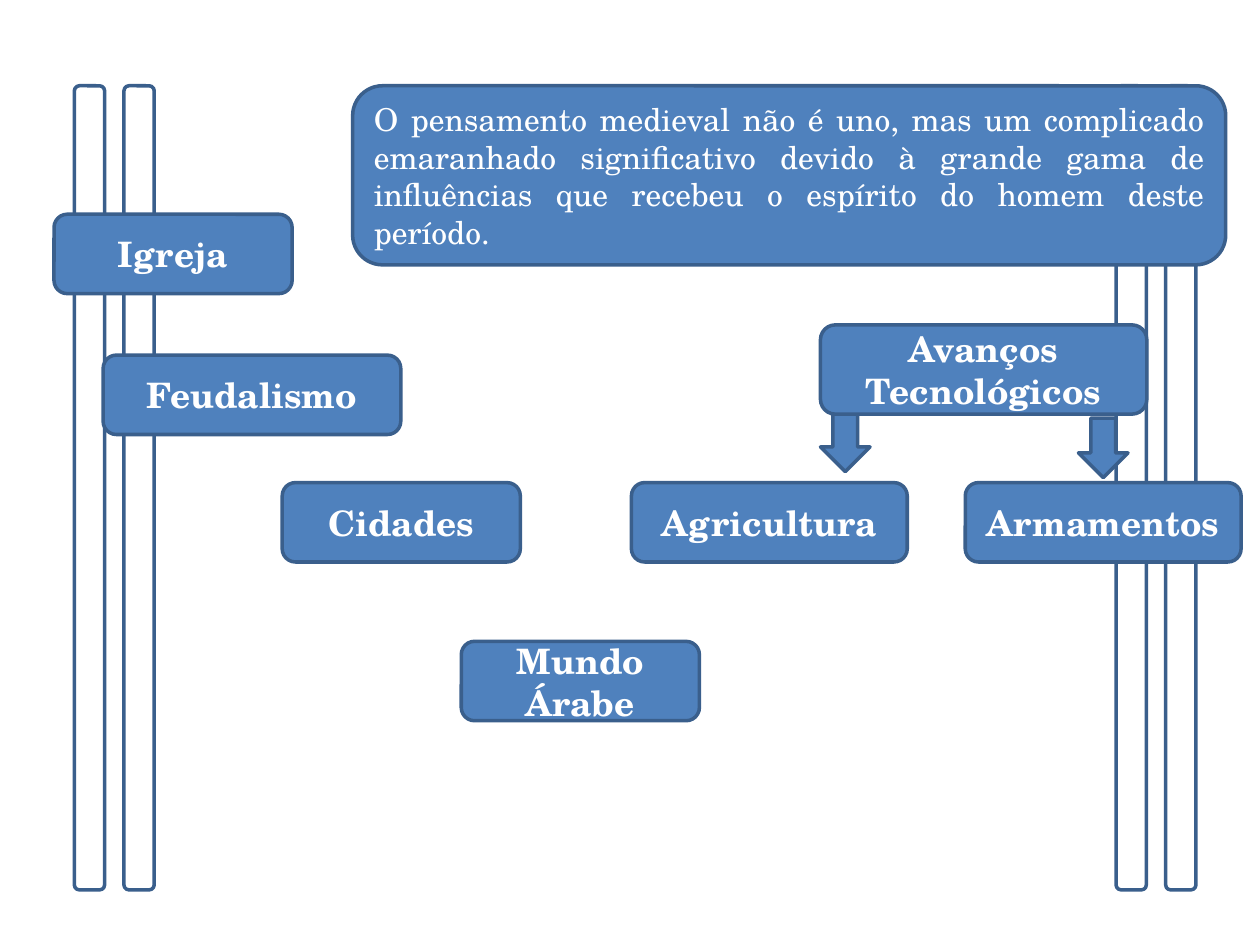
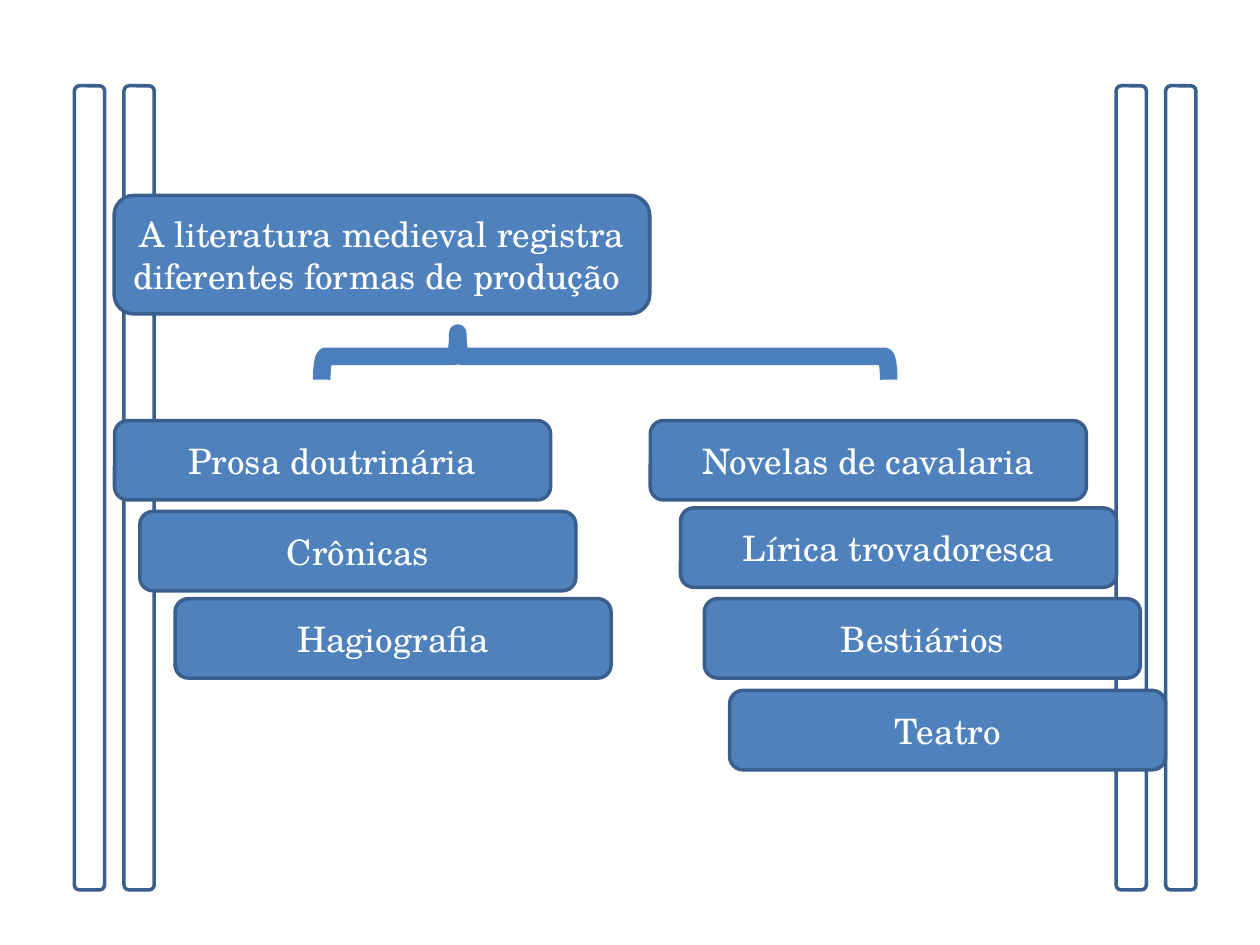
import dataclasses
import typing

import pptx
import pptx.dml.color
import pptx.enum.shapes
import pptx.enum.text
import pptx.util

Cm = pptx.util.Cm
Kind = pptx.enum.shapes.MSO_SHAPE
Align = pptx.enum.text.PP_ALIGN

FONT = "TeX Gyre Schola"
BLUE = "4F81BD"
DARK_BLUE = "3A5F8C"
BRACE_BLUE = "4B7EBC"
WHITE = "FFFFFF"

PILLAR_LEFTS = (22.5, 23.5, 1.5, 2.5)
PILLAR_TOP, PILLAR_WIDTH, PILLAR_HEIGHT = 1.73, 0.61, 16.21
BOX_HEIGHT = 1.6
TOPIC_WIDTH = 4.8
ADVANCE_WIDTH = 5.56
TOPIC_ROW = 9.73
GENRE_WIDTH = 8.79


@dataclasses.dataclass(frozen=True)
class Box:
    left: float
    top: float
    width: float
    height: float = BOX_HEIGHT
    text: str = ""
    size: int = 20
    bold: bool = False
    align: Align = Align.CENTER
    kind: Kind = Kind.ROUNDED_RECTANGLE
    fill: typing.Optional[str] = BLUE
    line: str = DARK_BLUE
    weight: float = 2


def topic(text: str, left: float, top: float, width: float = TOPIC_WIDTH,
          height: float = BOX_HEIGHT) -> Box:
    return Box(left, top, width, height, text, bold=True)


def arrow(left: float, top: float) -> Box:
    return Box(left, top, 1, 1.2, kind=Kind.DOWN_ARROW)


def genre(text: str, left: float, top: float) -> Box:
    return Box(left, top, GENRE_WIDTH, text=text)


PILLARS = [Box(left, PILLAR_TOP, PILLAR_WIDTH, PILLAR_HEIGHT, fill=WHITE)
           for left in PILLAR_LEFTS]

INFLUENCES = [
    Box(7.11, PILLAR_TOP, 17.6, 3.61,
        "O pensamento medieval não é uno, mas um complicado emaranhado "
        "significativo devido à grande gama de influências que recebeu o "
        "espírito do homem deste período.", size=18, align=Align.JUSTIFY),
    topic("Igreja", 1.09, 4.32),
    topic("Feudalismo", 2.08, 7.16, 6),
    topic("Agricultura", 12.73, TOPIC_ROW, ADVANCE_WIDTH),
    arrow(16.54, 8.31),
    topic("Avanços Tecnológicos", 16.54, 6.55, 6.58, 1.8),
    arrow(21.74, 8.43),
    topic("Armamentos", 19.46, TOPIC_ROW, ADVANCE_WIDTH),
    topic("Cidades", 5.69, TOPIC_ROW),
    topic("Mundo Árabe", 9.3, 12.93),
]

LITERATURE_LEAD = Box(
    2.3, 3.94, 10.8, 2.39,
    "A literatura medieval registra diferentes formas de produção ")
LITERATURE_BRACE = Box(11.73, 1.47, 0.94, 11.43, kind=Kind.LEFT_BRACE,
                       fill=None, line=BRACE_BLUE, weight=10)
GENRES = [
    genre("Prosa doutrinária", 2.31, 8.48),
    genre("Crônicas", 2.82, 10.31),
    genre("Hagiografia", 3.53, 12.07),
    genre("Novelas de cavalaria", 13.11, 8.48),
    genre("Lírica trovadoresca", 13.72, 10.24),
    genre("Bestiários", 14.2, 12.07),
    genre("Teatro", 14.71, 13.92),
]


def color(value: str) -> pptx.dml.color.RGBColor:
    return pptx.dml.color.RGBColor.from_string(value)


def write(shape, text: str, *, size: int, bold: bool, align: Align) -> None:
    frame = shape.text_frame
    frame.word_wrap = True
    frame.vertical_anchor = pptx.enum.text.MSO_ANCHOR.MIDDLE
    para = frame.paragraphs[0]
    para.alignment = align
    span = para.add_run()
    span.text = text
    span.font.name = FONT
    span.font.size = pptx.util.Pt(size)
    span.font.bold = bold
    span.font.color.rgb = color(WHITE)


def draw(page, box: Box):
    shape = page.shapes.add_shape(
        box.kind, Cm(box.left), Cm(box.top), Cm(box.width), Cm(box.height))
    shape.shadow.inherit = False
    if box.fill:
        shape.fill.solid()
        shape.fill.fore_color.rgb = color(box.fill)
    else:
        shape.fill.background()
    shape.line.color.rgb = color(box.line)
    shape.line.width = pptx.util.Pt(box.weight)
    if box.text:
        write(shape, box.text, size=box.size, bold=box.bold, align=box.align)
    return shape


def add_page(deck):
    page = deck.slides.add_slide(deck.slide_layouts.get_by_name("Blank"))
    for pillar in PILLARS:
        draw(page, pillar)
    return page


def add_influences(deck) -> None:
    page = add_page(deck)
    for box in INFLUENCES:
        draw(page, box)


def add_literature(deck) -> None:
    page = add_page(deck)
    draw(page, LITERATURE_LEAD)
    brace = draw(page, LITERATURE_BRACE)
    brace.rotation = 90
    brace.adjustments[0] = 0.08
    brace.adjustments[1] = 0.76
    for box in GENRES:
        draw(page, box)


def main() -> None:
    deck = pptx.Presentation()
    deck.slide_width = Cm(25.4)
    deck.slide_height = Cm(19.05)
    add_influences(deck)
    add_literature(deck)
    deck.save("out.pptx")


if __name__ == "__main__":
    main()
